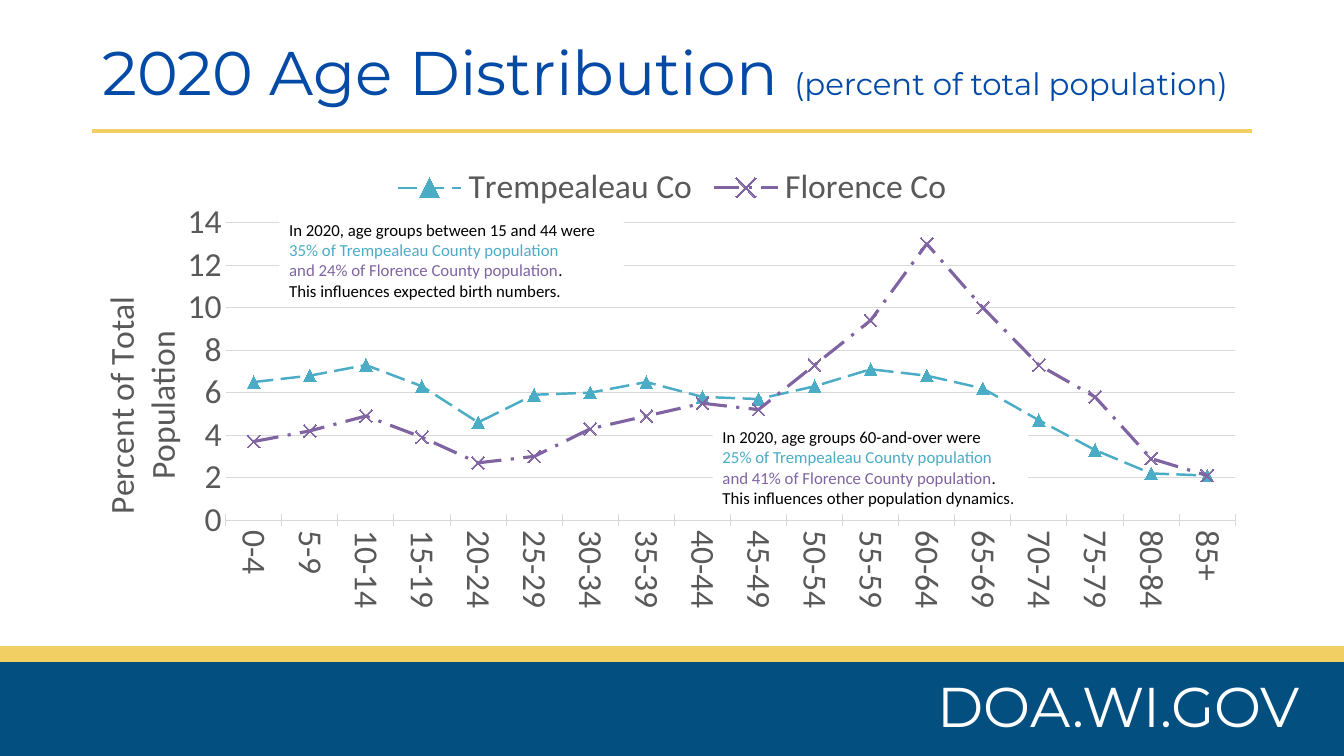
import pptx
import pptx.chart.data
import pptx.dml.color
import pptx.enum.chart
import pptx.enum.dml
import pptx.enum.shapes
import pptx.enum.text
import pptx.oxml
import pptx.oxml.ns
import pptx.util
from pptx.util import Pt

COLORS = {
    "gold": "F2CF63", "navy": "034F80", "title": "034AA6", "white": "FFFFFF",
    "black": "000000", "gray": "595959", "grid": "D9D9D9",
    "trempealeau": "4BACC6", "florence": "8064A2",
}
AGE_GROUPS = [f"{age}-{age + 4}" for age in range(0, 85, 5)] + ["85+"]
TREMPEALEAU = [6.5, 6.8, 7.3, 6.3, 4.6, 5.9, 6, 6.5, 5.8, 5.7,
               6.3, 7.1, 6.8, 6.2, 4.7, 3.3, 2.2, 2.1]
FLORENCE = [3.7, 4.2, 4.9, 3.9, 2.7, 3, 4.3, 4.9, 5.5, 5.2,
            7.3, 9.4, 13, 10, 7.3, 5.8, 2.9, 2.1]


def rgb(color):
    return pptx.dml.color.RGBColor.from_string(COLORS[color])


def style_font(font, size, color, face="Calibri"):
    font.size = Pt(size)
    font.name = face
    font.bold = False
    font.color.rgb = rgb(color)


def add_band(slide, left, top, width, height, color):
    band = slide.shapes.add_shape(
        pptx.enum.shapes.MSO_SHAPE.RECTANGLE,
        Pt(left), Pt(top), Pt(width), Pt(height))
    band.shadow.inherit = False
    band.fill.solid()
    band.fill.fore_color.rgb = rgb(color)
    band.line.fill.background()
    return band


def add_rule(slide, left, right, y):
    rule = slide.shapes.add_connector(
        pptx.enum.shapes.MSO_CONNECTOR.STRAIGHT, Pt(left), Pt(y), Pt(right), Pt(y))
    rule.line.color.rgb = rgb("gold")
    rule.line.width = Pt(3)
    pptx.oxml.ns.qn("a:effectLst")
    rule._element.spPr.append(
        pptx.oxml.parse_xml(f"<a:effectLst {pptx.oxml.ns.nsdecls('a')}/>"))


def add_run(paragraph, text, size, color, face="Calibri"):
    run = paragraph.add_run()
    run.text = text
    style_font(run.font, size, color, face)


def add_heading(slide, left, top, width, height, runs, color, align, anchor):
    heading = slide.shapes.add_textbox(Pt(left), Pt(top), Pt(width), Pt(height))
    frame = heading.text_frame
    frame.word_wrap = True
    frame.vertical_anchor = anchor
    paragraph = frame.paragraphs[0]
    paragraph.alignment = align
    for text, size in runs:
        add_run(paragraph, text, size, color, "Montserrat")
    return paragraph


def add_note(slide, left, top, width, ages, shares, effect):
    frame = add_band(slide, left, top, width, 65.5, "white").text_frame
    frame.word_wrap = True
    frame.vertical_anchor = pptx.enum.text.MSO_ANCHOR.TOP
    frame.auto_size = pptx.enum.text.MSO_AUTO_SIZE.SHAPE_TO_FIT_TEXT
    lines = [
        [(f"In 2020, age groups {ages} were", "black")],
        [(f"{shares[0]}% of Trempealeau County population", "trempealeau")],
        [(f"and {shares[1]}% of Florence County population", "florence"), (".", "black")],
        [(f"This influences {effect}.", "black")],
    ]
    for index, line in enumerate(lines):
        paragraph = frame.add_paragraph() if index else frame.paragraphs[0]
        paragraph.alignment = pptx.enum.text.PP_ALIGN.LEFT
        for text, color in line:
            add_run(paragraph, text, 12, color)


def rotate_text(body, degrees):
    body.set("rot", str(degrees * 60000))
    body.set("vert", "horz")


def place_plot(chart, x, y, w, h):
    plot_area = chart._chartSpace.xpath("c:chart/c:plotArea")[0]
    for layout in plot_area.xpath("c:layout"):
        plot_area.remove(layout)
    sizes = "".join(f'<c:{key} val="{value}"/>'
                    for key, value in zip("xywh", (x, y, w, h)))
    plot_area.insert(0, pptx.oxml.parse_xml(
        f"<c:layout {pptx.oxml.ns.nsdecls('c')}><c:manualLayout>"
        '<c:layoutTarget val="inner"/><c:xMode val="edge"/><c:yMode val="edge"/>'
        f"{sizes}</c:manualLayout></c:layout>"))


def style_axes(chart):
    ages, percent = chart.category_axis, chart.value_axis
    ticks = pptx.enum.chart.XL_TICK_MARK
    for axis, mark in ((ages, ticks.CROSS), (percent, ticks.NONE)):
        axis.major_tick_mark = mark
        axis.minor_tick_mark = ticks.NONE
        style_font(axis.tick_labels.font, 24, "gray")
    ages.tick_label_position = pptx.enum.chart.XL_TICK_LABEL_POSITION.LOW
    ages.format.line.color.rgb = rgb("grid")
    ages.format.line.width = Pt(0.75)
    rotate_text(ages._element.xpath("c:txPr/a:bodyPr")[0], 90)

    percent.minimum_scale, percent.maximum_scale, percent.major_unit = 0, 14, 2
    percent.tick_labels.number_format = "#,##0"
    percent.tick_labels.number_format_is_linked = False
    percent.format.line.fill.background()
    percent.major_gridlines.format.line.color.rgb = rgb("grid")
    percent.major_gridlines.format.line.width = Pt(0.75)
    title = percent.axis_title.text_frame
    add_run(title.paragraphs[0], "Percent of Total Population", 24, "gray")
    rotate_text(title._txBody.bodyPr, -90)


def style_series(series, color, width, dash, marker, marker_filled):
    series.smooth = False
    series.format.line.color.rgb = rgb(color)
    series.format.line.width = Pt(width)
    series.format.line.dash_style = dash
    series.marker.style = marker
    series.marker.size = 9
    series.marker.format.line.color.rgb = rgb(color)
    if marker_filled:
        series.marker.format.fill.solid()
        series.marker.format.fill.fore_color.rgb = rgb(color)
    else:
        series.marker.format.fill.background()


def add_age_chart(slide):
    data = pptx.chart.data.CategoryChartData()
    data.categories = AGE_GROUPS
    data.add_series("Trempealeau Co", TREMPEALEAU)
    data.add_series("Florence Co", FLORENCE)
    chart = slide.shapes.add_chart(
        pptx.enum.chart.XL_CHART_TYPE.LINE_MARKERS,
        Pt(66), Pt(109.5), Pt(828), Pt(337), data).chart
    style_font(chart.font, 24, "black")
    chart.has_title = False
    chart.has_legend = True
    chart.legend.position = pptx.enum.chart.XL_LEGEND_POSITION.TOP
    chart.legend.include_in_layout = False
    style_font(chart.legend.font, 24, "gray")
    chart.plots[0].vary_by_categories = False
    place_plot(chart, 0.115, 0.147, 0.871, 0.631)
    style_axes(chart)
    dashes, markers = pptx.enum.dml.MSO_LINE, pptx.enum.chart.XL_MARKER_STYLE
    trempealeau, florence = chart.plots[0].series
    style_series(trempealeau, "trempealeau", 1.75, dashes.LONG_DASH, markers.TRIANGLE, True)
    style_series(florence, "florence", 2.25, dashes.LONG_DASH_DOT, markers.X, False)


def main():
    deck = pptx.Presentation()
    deck.slide_width, deck.slide_height = Pt(960), Pt(540)
    slide = deck.slides.add_slide(deck.slide_layouts[6])
    align, anchor = pptx.enum.text.PP_ALIGN, pptx.enum.text.MSO_ANCHOR

    add_rule(slide, 66, 894, 93.5)
    add_band(slide, 0, 461.5, 960, 78.5, "gold")
    add_band(slide, 0, 473, 960, 67, "navy")
    add_heading(slide, 227, 476, 708, 55.5, [("DOA.WI.GOV", 40)],
                "white", align.RIGHT, anchor.TOP)
    title = add_heading(
        slide, 66, 16.5, 828, 75,
        [("2020 Age Distribution ", 44), ("(percent of total population)", 22)],
        "title", align.LEFT, anchor.MIDDLE)
    title.line_spacing = 0.9
    add_age_chart(slide)
    add_note(slide, 199.5, 153.5, 246, "between 15 and 44", (35, 24),
             "expected birth numbers")
    add_note(slide, 509, 301.5, 225.5, "60-and-over", (25, 41),
             "other population dynamics")
    deck.save("out.pptx")


if __name__ == "__main__":
    main()
